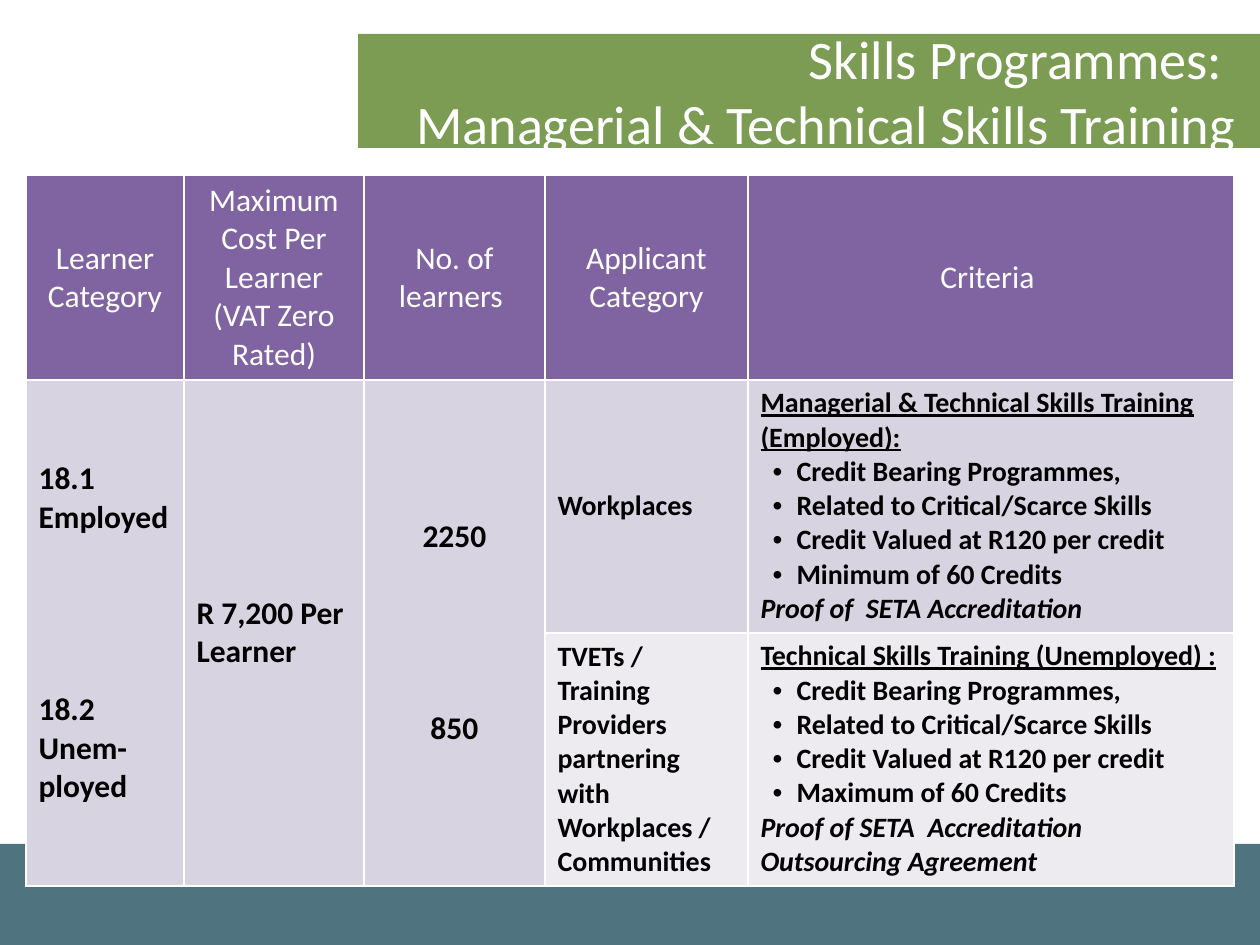
"""Build the skills programmes slide with its table of funding criteria."""
from copy import deepcopy
from dataclasses import dataclass

from pptx import Presentation
from pptx.dml.color import RGBColor
from pptx.enum.shapes import MSO_SHAPE
from pptx.enum.text import MSO_ANCHOR, MSO_AUTO_SIZE, PP_ALIGN
from pptx.oxml import parse_xml
from pptx.oxml.ns import nsdecls, qn
from pptx.util import Emu, Pt


@dataclass(frozen=True)
class Theme:
    font: str = "Calibri"
    white: str = "FFFFFF"
    black: str = "000000"
    teal: str = "4F737F"
    green: str = "7B9C52"
    purple: str = "8064A2"
    lilac: str = "D8D3E0"
    pale: str = "EDEAF0"
    title: int = 31
    large: int = 18
    small: int = 16
    gap: int = 88


@dataclass(frozen=True)
class Line:
    text: str
    bold: bool = True
    italic: bool = False
    under: bool = False
    bullet: bool = False
    gap: int = 0


@dataclass(frozen=True)
class Cell:
    row: int
    col: int
    lines: tuple[Line, ...]
    fill: str
    size: int
    color: str = Theme.black
    align: PP_ALIGN = PP_ALIGN.LEFT
    anchor: MSO_ANCHOR = MSO_ANCHOR.MIDDLE
    span: int = 1


@dataclass(frozen=True)
class Bar:
    left: int
    top: int
    width: int
    height: int
    fill: str


THEME = Theme()
SCALE = 914400 / 126
COLS = (158, 180, 181, 203, 486)
ROWS = (203, 253, 253)
BARS = (
    Bar(0, 844, 1260, 101, THEME.teal),
    Bar(358, 34, 902, 114, THEME.green),
)
HEADS = (
    "Learner Category",
    "Maximum Cost Per Learner (VAT Zero Rated)",
    "No. of learners ",
    "Applicant Category",
    "Criteria ",
)


def px(count: int) -> Emu:
    """Turn pixels into EMU."""
    return Emu(round(count * SCALE))


def write(frame, *lines: Line, size: int, color: str, align=PP_ALIGN.LEFT) -> None:
    """Write formatted lines into a text frame."""
    for num, line in enumerate(lines):
        para = frame.add_paragraph() if num else frame.paragraphs[0]
        para.text = line.text
        para.alignment = align
        if line.gap:
            para.space_before = Pt(line.gap)
        if line.bullet:
            props = para._p.get_or_add_pPr()
            props.set("marL", str(px(36)))
            props.set("indent", str(px(-24)))
            props.append(parse_xml(f'<a:buFont {nsdecls("a")} typeface="Arial"/>'))
            props.append(parse_xml(f'<a:buChar {nsdecls("a")} char="•"/>'))
        for run in para.runs:
            font = run.font
            font.name, font.size = THEME.font, Pt(size)
            font.bold, font.italic, font.underline = line.bold, line.italic, line.under
            font.color.rgb = RGBColor.from_string(color)
        for brk in para._p.findall(qn("a:br")):
            brk.append(deepcopy(para.runs[0]._r.rPr))


def draw_bar(slide, bar: Bar) -> None:
    """Draw one plain colour bar."""
    box = map(px, (bar.left, bar.top, bar.width, bar.height))
    shape = slide.shapes.add_shape(MSO_SHAPE.RECTANGLE, *box)
    shape.shadow.inherit = False
    shape.fill.solid()
    shape.fill.fore_color.rgb = RGBColor.from_string(bar.fill)
    shape.line.fill.background()


def draw_title(slide, text: str) -> None:
    """Place the title in front of the bars."""
    title = slide.shapes.title
    title.left, title.top, title.width, title.height = map(px, (113, 32, 1134, 116))
    frame = title.text_frame
    frame.auto_size = MSO_AUTO_SIZE.NONE
    frame.vertical_anchor = MSO_ANCHOR.MIDDLE
    write(frame, Line(text, bold=False), size=THEME.title, color=THEME.white,
          align=PP_ALIGN.RIGHT)
    slide.shapes._spTree.append(title._element)


def rule(cell) -> None:
    """Give a table cell thin white borders."""
    props = cell._tc.get_or_add_tcPr()
    for num, side in enumerate("LRTB"):
        props.insert(num, parse_xml(
            f'<a:ln{side} {nsdecls("a")} w="{Pt(1)}"><a:solidFill>'
            f'<a:srgbClr val="{THEME.white}"/></a:solidFill></a:ln{side}>'))


def draw_cell(table, item: Cell) -> None:
    """Fill one table cell, merged downward over its span."""
    cell = table.cell(item.row, item.col)
    if item.span > 1:
        cell.merge(table.cell(item.row + item.span - 1, item.col))
    for row in range(item.row, item.row + item.span):
        part = table.cell(row, item.col)
        part.fill.solid()
        part.fill.fore_color.rgb = RGBColor.from_string(item.fill)
        rule(part)
    cell.vertical_anchor = item.anchor
    write(cell.text_frame, *item.lines, size=item.size, color=item.color,
          align=item.align)


def terms(head: str, limit: str, *proofs: str) -> tuple[Line, ...]:
    """List the criteria of one kind of training."""
    points = ("Credit Bearing Programmes,", "Related to Critical/Scarce Skills",
              "Credit Valued at R120 per credit", f"{limit} of 60 Credits")
    return (Line(head, under=True), *(Line(point, bullet=True) for point in points),
            *(Line(proof, italic=True) for proof in proofs))


def cells() -> list[Cell]:
    """List every cell of the table."""
    mid, top = PP_ALIGN.CENTER, MSO_ANCHOR.TOP
    large, small = THEME.large, THEME.small
    lilac, pale = THEME.lilac, THEME.pale
    work = terms("Managerial & Technical Skills Training (Employed):", "Minimum",
                 "Proof of  SETA Accreditation")
    tech = terms("Technical Skills Training (Unemployed) :", "Maximum",
                 "Proof of SETA  Accreditation", "Outsourcing Agreement")
    group = (Line("18.1"), Line("Employed"),
             Line("18.2", gap=THEME.gap), Line("Unem-ployed"))
    count = (Line("2250"), Line("850", gap=THEME.gap))
    firms = "TVETs / Training Providers partnering with Workplaces / Communities"
    return [
        *(Cell(0, col, (Line(head, bold=False),), THEME.purple, large, THEME.white, mid)
          for col, head in enumerate(HEADS)),
        Cell(1, 0, group, lilac, large, span=2),
        Cell(1, 1, (Line("R 7,200 Per Learner"),), lilac, large, span=2),
        Cell(1, 2, count, lilac, large, align=mid, span=2),
        Cell(1, 3, (Line("Workplaces"),), lilac, small),
        Cell(1, 4, work, lilac, small, anchor=top),
        Cell(2, 3, (Line(firms),), pale, small),
        Cell(2, 4, tech, pale, small, anchor=top),
    ]


def draw_table(slide) -> None:
    """Draw the table of programmes."""
    box = map(px, (26, 175, sum(COLS), sum(ROWS)))
    table = slide.shapes.add_table(len(ROWS), len(COLS), *box).table
    table.first_row = table.horz_banding = False
    for col, width in zip(table.columns, COLS):
        col.width = px(width)
    for row, height in zip(table.rows, ROWS):
        row.height = px(height)
    for item in cells():
        draw_cell(table, item)


def main() -> None:
    """Build and save the slide."""
    deck = Presentation()
    deck.slide_width, deck.slide_height = px(1260), px(945)
    slide = deck.slides.add_slide(deck.slide_layouts[5])
    for bar in BARS:
        draw_bar(slide, bar)
    draw_title(slide, "Skills Programmes: \vManagerial & Technical Skills Training")
    draw_table(slide)
    deck.save("out.pptx")


if __name__ == "__main__":
    main()
